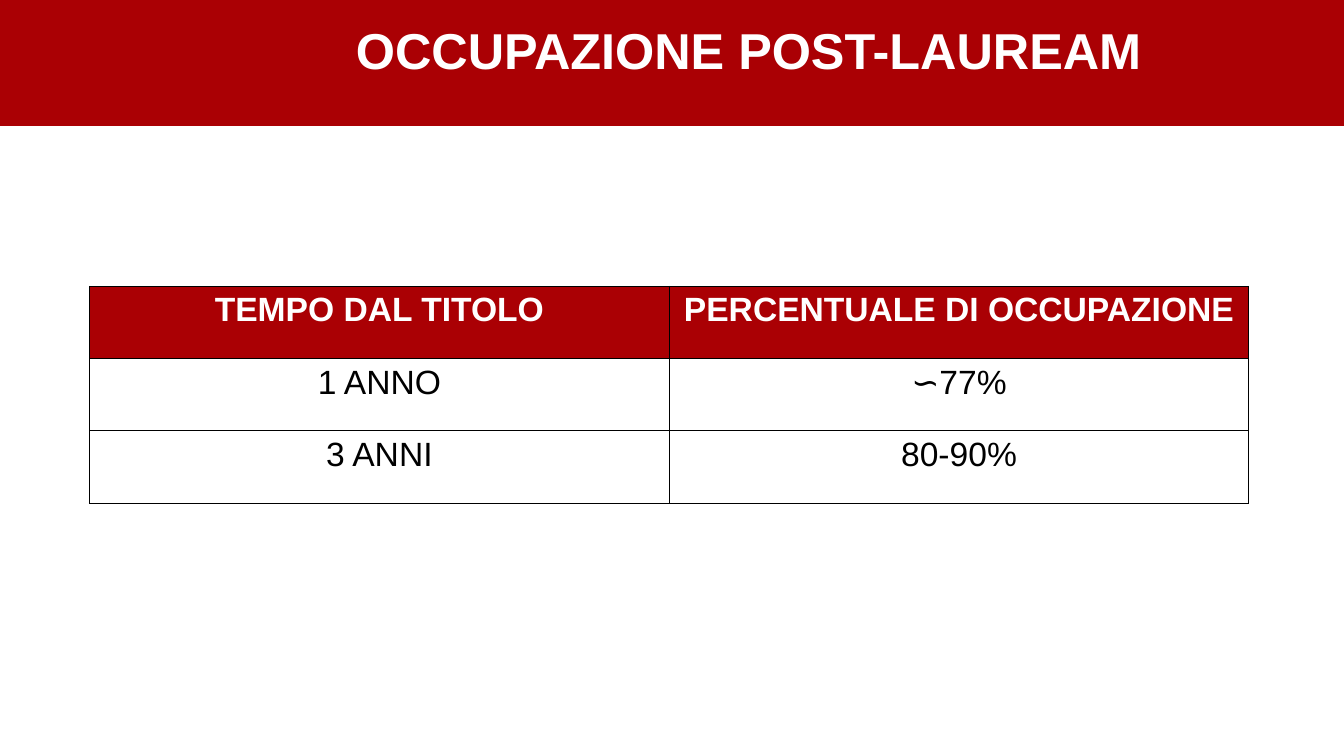
"""Build a slide with a table of employment rates after graduation."""
from dataclasses import dataclass

import lxml.etree
import pptx
import pptx.dml.color
import pptx.enum.shapes
import pptx.enum.text
import pptx.oxml
import pptx.oxml.ns
import pptx.util

Pt = pptx.util.Pt
Color = pptx.dml.color.RGBColor.from_string
Align = pptx.enum.text.PP_ALIGN
Anchor = pptx.enum.text.MSO_ANCHOR
qn = pptx.oxml.ns.qn


@dataclass(frozen=True)
class Theme:
    red: str = "AA0004"
    white: str = "FFFFFF"
    black: str = "000000"
    font: str = "Arial"
    title: int = 36
    body: int = 24


theme = Theme()


def write(frame, text, size=theme.body, color=theme.black, bold=False,
          align=Align.CENTER, space=1.0):
    frame.text = text
    line = frame.paragraphs[0]
    line.alignment = align
    line.line_spacing = space
    font = line.runs[0].font
    font.name = theme.font
    font.size = Pt(size)
    font.bold = bold
    font.color.rgb = Color(color)


def border(cell):
    props = cell._tc.get_or_add_tcPr()
    for side in ("lnL", "lnR", "lnT", "lnB"):
        edge = lxml.etree.SubElement(props, qn(f"a:{side}"), w=str(Pt(1)))
        fill = lxml.etree.SubElement(edge, qn("a:solidFill"))
        lxml.etree.SubElement(fill, qn("a:srgbClr"), val=theme.black)


deck = pptx.Presentation()
deck.slide_width, deck.slide_height = Pt(960), Pt(540)
slide = deck.slides.add_slide(deck.slide_layouts[5])

band = slide.shapes.add_shape(
    pptx.enum.shapes.MSO_SHAPE.RECTANGLE, 0, 0, Pt(960), Pt(90))
band.shadow.inherit = False
band.fill.solid()
band.fill.fore_color.rgb = Color(theme.red)
band.line.fill.background()

title = slide.shapes.title
band._element.getparent().insert(2, band._element)
title.left, title.top = Pt(247), Pt(-9)
title.width, title.height = Pt(644), Pt(94)
title.text_frame.vertical_anchor = Anchor.MIDDLE
write(title.text_frame, "OCCUPAZIONE POST-LAUREAM", size=theme.title,
      color=theme.white, bold=True, align=Align.LEFT, space=0.9)

rows = [
    ("TEMPO DAL TITOLO", "PERCENTUALE DI OCCUPAZIONE"),
    ("1 ANNO", "∽77%"),
    ("3 ANNI", "80-90%"),
]
table = slide.shapes.add_table(
    len(rows), 2, Pt(64), Pt(204.6), Pt(828), Pt(154.8)).table
for r, row in enumerate(rows):
    head = r == 0
    for c, text in enumerate(row):
        cell = table.cell(r, c)
        border(cell)
        cell.fill.solid()
        cell.fill.fore_color.rgb = Color(theme.red if head else theme.white)
        write(cell.text_frame, text, bold=head,
              color=theme.white if head else theme.black)

deck.save("out.pptx")
